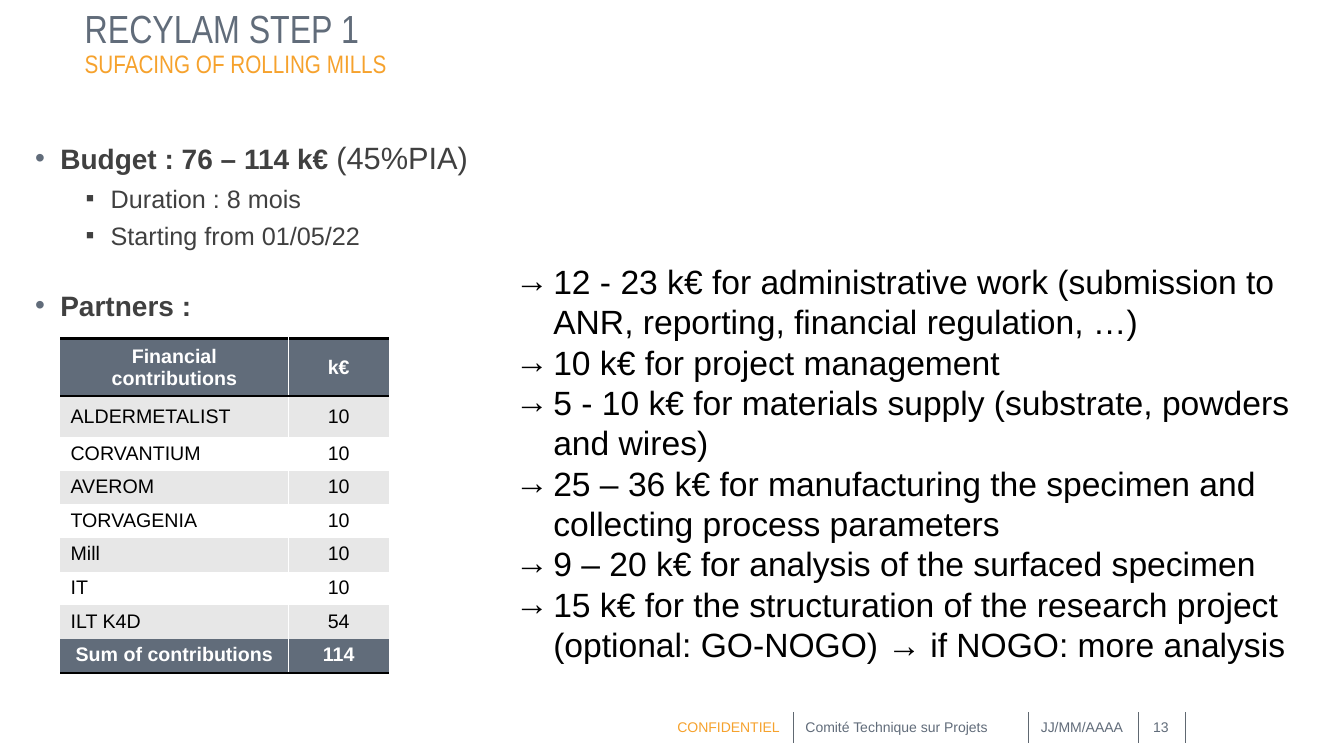
from lxml import etree
from pptx import Presentation
from pptx.dml.color import RGBColor
from pptx.enum.shapes import MSO_CONNECTOR
from pptx.enum.text import MSO_ANCHOR, PP_ALIGN
from pptx.oxml.ns import qn
from pptx.util import Inches, Pt

SLATE = RGBColor(0x61, 0x6C, 0x7A)
RULE_GREY = RGBColor(0x60, 0x68, 0x71)
ORANGE = RGBColor(0xF6, 0xA2, 0x2D)
DARK = RGBColor(0x40, 0x40, 0x40)
BLACK = RGBColor(0, 0, 0)
WHITE = RGBColor(0xFF, 0xFF, 0xFF)
BAND = RGBColor(0xE7, 0xE7, 0xE7)
LEFT, CENTER = PP_ALIGN.LEFT, PP_ALIGN.CENTER
TOP, MIDDLE, BOTTOM = MSO_ANCHOR.TOP, MSO_ANCHOR.MIDDLE, MSO_ANCHOR.BOTTOM
STRAIGHT = MSO_CONNECTOR.STRAIGHT
PLAIN_TABLE = "{2D5ABB26-0587-4C30-8999-92F81FD0307C}"

CONTRIBUTIONS = [
    ("Financial contributions", "k€"),
    ("ALDERMETALIST", "10"),
    ("CORVANTIUM", "10"),
    ("AVEROM", "10"),
    ("TORVAGENIA", "10"),
    ("Mill", "10"),
    ("IT", "10"),
    ("ILT K4D", "54"),
    ("Sum of contributions", "114"),
]
COST_ITEMS = [
    "12 - 23 k€ for administrative work (submission to ANR, reporting, financial regulation, …)",
    "10 k€ for project management",
    "5 - 10 k€ for materials supply (substrate, powders and wires)",
    "25 – 36 k€ for manufacturing the specimen and collecting process parameters",
    "9 – 20 k€ for analysis of the surfaced specimen",
    "15 k€ for the structuration of the research project (optional: GO-NOGO) → if NOGO: more analysis",
]


class SlideBuilder:
    font = "Arial"
    heading_font = "Arial Narrow"

    def __init__(self, slide):
        self.slide = slide

    def style_run(self, run, size, color, bold=False, font=None):
        run.font.name = font or self.font
        run.font.size = Pt(size)
        run.font.bold = bold
        run.font.color.rgb = color

    def frame(self, left, top, width, height, anchor=TOP, margins=(0.1, 0.05)):
        box = self.slide.shapes.add_textbox(
            Inches(left), Inches(top), Inches(width), Inches(height))
        frame = box.text_frame
        frame.word_wrap = True
        frame.vertical_anchor = anchor
        frame.margin_left = frame.margin_right = Inches(margins[0])
        frame.margin_top = frame.margin_bottom = Inches(margins[1])
        return frame

    def label(self, place, text, size, color, anchor=MIDDLE, align=LEFT,
              margins=(0.1, 0), font=None, spacing=None):
        frame = self.frame(*place, anchor, margins)
        frame.text = text
        paragraph = frame.paragraphs[0]
        paragraph.alignment = align
        paragraph.line_spacing = spacing
        self.style_run(paragraph.runs[0], size, color, font=font)

    def bullet(self, frame, text, size, color, mark, indent, hanging,
               before=0, bold=False, level=0, mark_color=None):
        paragraph = frame.paragraphs[0]
        if paragraph.runs:
            paragraph = frame.add_paragraph()
        paragraph.text = text
        paragraph.level = level
        paragraph.space_before = Pt(before)
        properties = paragraph._p.get_or_add_pPr()
        properties.set("marL", str(Inches(indent)))
        properties.set("indent", str(-Inches(hanging)))
        if mark_color is not None:
            tint = etree.SubElement(properties, qn("a:buClr"))
            etree.SubElement(tint, qn("a:srgbClr"), val=str(mark_color))
        etree.SubElement(properties, qn("a:buFont"), typeface=self.font)
        etree.SubElement(properties, qn("a:buChar"), char=mark)
        self.style_run(paragraph.runs[0], size, color, bold)
        return paragraph

    def divider(self, x, top, bottom):
        line = self.slide.shapes.add_connector(
            STRAIGHT, Inches(x), Inches(bottom), Inches(x), Inches(top))
        line.line.color.rgb = RULE_GREY
        line.line.width = Pt(0.5)
        etree.SubElement(line._element.spPr, qn("a:effectLst"))

    def border(self, cell, side, color, width):
        edge = etree.SubElement(
            cell._tc.get_or_add_tcPr(), qn("a:ln" + side), w=str(Pt(width)))
        fill = etree.SubElement(edge, qn("a:solidFill"))
        etree.SubElement(fill, qn("a:srgbClr"), val=str(color))

    def table(self, left, top, widths, heights, rows):
        table = self.slide.shapes.add_table(
            len(rows), len(widths), Inches(left), Inches(top),
            Inches(sum(widths)), Inches(sum(heights))).table
        table._tbl.tblPr.find(qn("a:tableStyleId")).text = PLAIN_TABLE
        for column, width in zip(table.columns, widths):
            column.width = Inches(width)
        last = len(rows) - 1
        for r, values in enumerate(rows):
            table.rows[r].height = Inches(heights[r])
            strong = r in (0, last)
            for c, value in enumerate(values):
                cell = table.cell(r, c)
                cell.text = value
                cell.vertical_anchor = MIDDLE if r < 2 else TOP
                paragraph = cell.text_frame.paragraphs[0]
                paragraph.alignment = CENTER if strong or c else LEFT
                self.style_run(paragraph.runs[0], 14,
                               WHITE if strong else BLACK, strong)
                self.border(cell, "L" if c else "R", WHITE, 1)
                if r == 0:
                    self.border(cell, "T", BLACK, 2)
                if strong:
                    self.border(cell, "B", BLACK, 2)
                cell.fill.solid()
                cell.fill.fore_color.rgb = (
                    SLATE if strong else BAND if r % 2 else WHITE)


def main():
    deck = Presentation()
    deck.slide_width, deck.slide_height = Inches(13.33), Inches(7.5)
    page = SlideBuilder(deck.slides.add_slide(deck.slide_layouts[6]))

    page.label((0.84, 0.14, 12.25, 0.34), "RECYLAM STEP 1", 28, SLATE,
               margins=(0, 0), font=page.heading_font, spacing=0.9)
    page.label((0.84, 0.49, 12.25, 0.27), "SUFACING OF ROLLING MILLS", 18, ORANGE,
               margins=(0, 0), font=page.heading_font)

    summary = page.frame(0.25, 1.33, 5.76, 5.43)
    budget = page.bullet(summary, "Budget : 76 – 114 k€ ", 20, DARK, "•",
                         0.25, 0.25, bold=True, mark_color=SLATE)
    funding_share = budget.add_run()
    funding_share.text = "(45%PIA)"
    page.style_run(funding_share, 22, DARK)
    for detail in ("Duration : 8 mois", "Starting from 01/05/22"):
        page.bullet(summary, detail, 18, DARK, "▪", 0.75, 0.25, before=5, level=1)
    page.bullet(summary, "Partners :", 20, DARK, "•", 0.25, 0.25,
                before=27, bold=True, mark_color=SLATE)

    page.table(0.6, 3.36, [2.26, 1], [0.54, 0.41] + [0.33] * 7, CONTRIBUTIONS)

    costs = page.frame(5.01, 2.54, 8.07, 4.14)
    for item in COST_ITEMS:
        page.bullet(costs, item, 24, BLACK, "→", 0.38, 0.38)

    page.label((6.62, 7.13, 1.32, 0.17), "CONFIDENTIEL", 10, ORANGE, anchor=BOTTOM)
    for x in (7.87, 10.2, 11.29, 11.76):
        page.divider(x, 7.06, 7.37)
    for left, width, text, align in (
            (7.89, 2.29, "Comité Technique sur Projets", LEFT),
            (10.17, 1.12, "JJ/MM/AAAA", CENTER),
            (11.25, 0.53, "13", CENTER)):
        page.label((left, 7.01, width, 0.4), text, 10, SLATE, align=align)

    deck.save("out.pptx")


if __name__ == "__main__":
    main()
